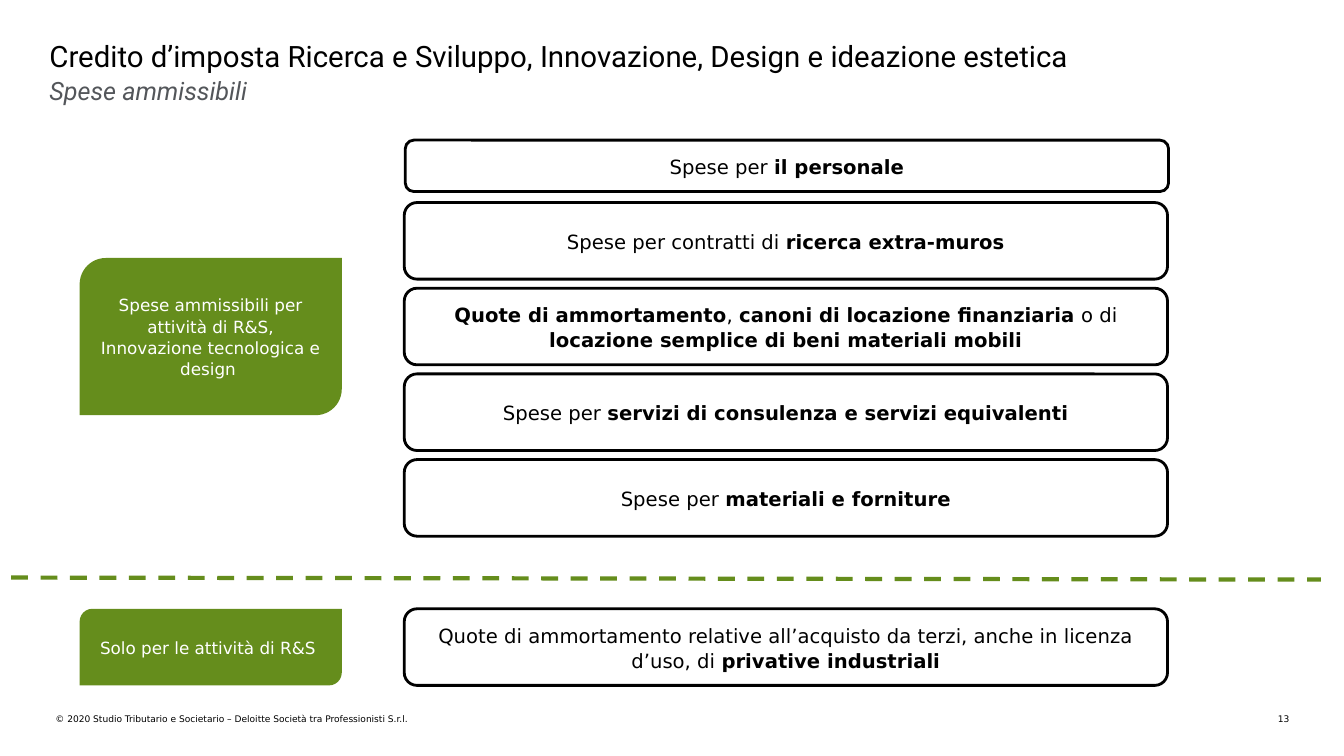
from lxml import etree
from pptx import Presentation
from pptx.dml.color import RGBColor
from pptx.enum.dml import MSO_LINE_DASH_STYLE as DASH
from pptx.enum.shapes import MSO_CONNECTOR as CONNECTOR, MSO_SHAPE as SHAPE
from pptx.enum.text import MSO_ANCHOR as ANCHOR, MSO_AUTO_SIZE as AUTO_SIZE, PP_ALIGN as ALIGN
from pptx.oxml.ns import qn
from pptx.util import Inches, Pt

COLORS = {"black": "000000", "white": "FFFFFF", "green": "658D1C", "gray": "53565A"}
BODY_FONT = "DejaVu Sans"
TITLE_FONT = "Roboto"

EXPENSE_LEFT, EXPENSE_WIDTH = 4.01, 7.57
LABEL_LEFT, LABEL_WIDTH = 0.79, 2.6
BOX_HEIGHT = 0.76
FIRST_TALL_TOP, ROW_PITCH = 2.01, 0.85
RD_ONLY_TOP = 6.04

STAFF = "Spese per *il personale*"
EXPENSES = [
    "Spese per contratti di *ricerca extra-muros*",
    "*Quote di ammortamento*, *canoni di locazione finanziaria* o di "
    "*locazione semplice di beni materiali mobili*",
    "Spese per *servizi di consulenza e servizi equivalenti*",
    "Spese per *materiali e forniture*",
]
PATENTS = (
    "Quote di ammortamento relative all’acquisto da terzi, anche in licenza "
    "d’uso, di *privative industriali*"
)


def color(name):
    return RGBColor.from_string(COLORS[name])


def set_frame(box, inset, anchor):
    settings = {
        "word_wrap": True,
        "auto_size": AUTO_SIZE.NONE,
        "vertical_anchor": anchor,
        "margin_left": Inches(inset),
        "margin_top": Inches(inset),
        "margin_right": Inches(inset),
        "margin_bottom": Inches(inset),
    }
    for name, value in settings.items():
        setattr(box.text_frame, name, value)


def write(box, text, size, ink, font=BODY_FONT, align=ALIGN.LEFT, spacing=1.0, italic=False):
    para = box.text_frame.paragraphs[0]
    para.alignment = align
    para.line_spacing = spacing
    for index, part in enumerate(text.split("*")):
        if not part:
            continue
        span = para.add_run()
        span.text = part
        settings = {"name": font, "size": Pt(size), "bold": index % 2 == 1, "italic": italic}
        for name, value in settings.items():
            setattr(span.font, name, value)
        span.font.color.rgb = color(ink)


def add_title(page, text):
    title = page.shapes.title
    place = {"left": 0.49, "top": 0.38, "width": 12.36, "height": 0.37}
    for name, value in place.items():
        setattr(title, name, Inches(value))
    set_frame(title, 0, ANCHOR.TOP)
    write(title, text, 21, "black", TITLE_FONT)


def add_text(page, place, text, size, ink, **style):
    box = page.shapes.add_textbox(*map(Inches, place))
    set_frame(box, 0, ANCHOR.TOP)
    write(box, text, size, ink, **style)


def add_box(page, kind, place, fill, text, size, ink):
    box = page.shapes.add_shape(kind, *map(Inches, place))
    box.shadow.inherit = False
    box.fill.solid()
    box.fill.fore_color.rgb = color(fill)
    set_frame(box, 0.1, ANCHOR.MIDDLE)
    write(box, text, size, ink, align=ALIGN.CENTER, spacing=1.06)
    return box


def add_expense(page, top, text, left=EXPENSE_LEFT, height=BOX_HEIGHT):
    place = (left, top, EXPENSE_WIDTH, height)
    box = add_box(page, SHAPE.ROUNDED_RECTANGLE, place, "white", text, 14, "black")
    box.line.color.rgb = color("black")
    box.line.width = Pt(2)


def add_label(page, top, height, text):
    place = (LABEL_LEFT, top, LABEL_WIDTH, height)
    box = add_box(page, SHAPE.ROUND_2_DIAG_RECTANGLE, place, "green", text, 12, "white")
    box.line.fill.background()


def add_divider(page):
    ends = (0.11, 5.73, 13.1, 5.75)
    divider = page.shapes.add_connector(CONNECTOR.STRAIGHT, *map(Inches, ends))
    divider.line.color.rgb = color("green")
    divider.line.width = Pt(3)
    divider.line.dash_style = DASH.DASH
    etree.SubElement(divider._element.spPr, qn("a:effectLst"))


def main():
    deck = Presentation()
    deck.slide_width, deck.slide_height = Inches(13.33), Inches(7.5)
    page = deck.slides.add_slide(deck.slide_layouts[5])

    add_title(page, "Credito d’imposta Ricerca e Sviluppo, Innovazione, Design e ideazione estetica")
    add_text(page, (0.49, 0.75, 12.36, 0.83), "Spese ammissibili", 18, "gray",
             font=TITLE_FONT, italic=True)

    add_expense(page, 1.39, STAFF, left=4.02, height=0.51)
    for row, expense in enumerate(EXPENSES):
        add_expense(page, FIRST_TALL_TOP + row * ROW_PITCH, expense)
    add_label(page, 2.56, 1.56,
              "Spese ammissibili per attività di R&S, Innovazione tecnologica e design ")

    add_divider(page)
    add_label(page, RD_ONLY_TOP, BOX_HEIGHT, "Solo per le attività di R&S ")
    add_expense(page, RD_ONLY_TOP, PATENTS)

    add_text(page, (0.55, 7.08, 5.86, 0.11),
             "© 2020 Studio Tributario e Societario – Deloitte Società tra Professionisti S.r.l.",
             6.5, "black")
    add_text(page, (12.45, 7.08, 0.34, 0.11), "13", 6.5, "black", align=ALIGN.RIGHT)
    deck.save("out.pptx")


if __name__ == "__main__":
    main()
